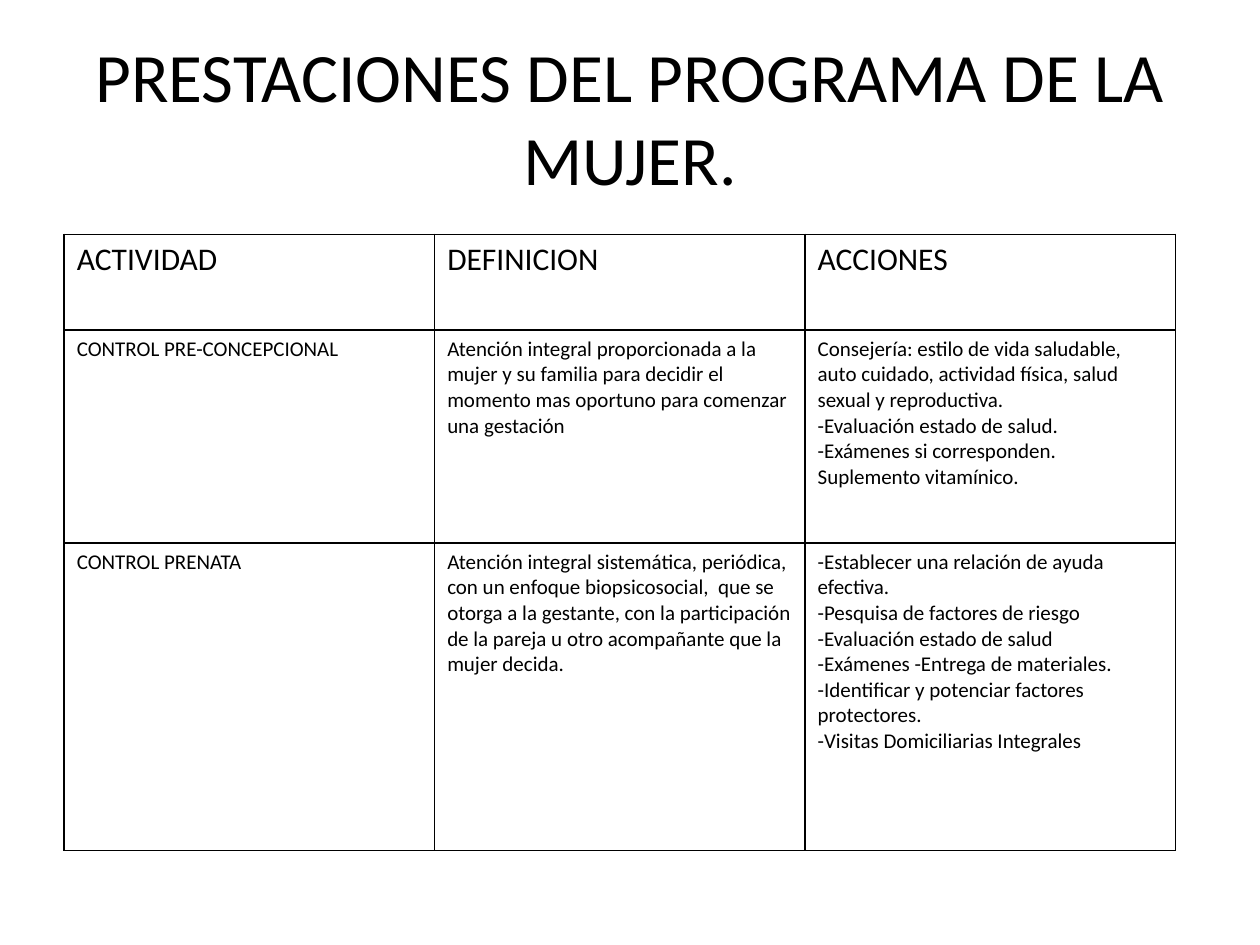
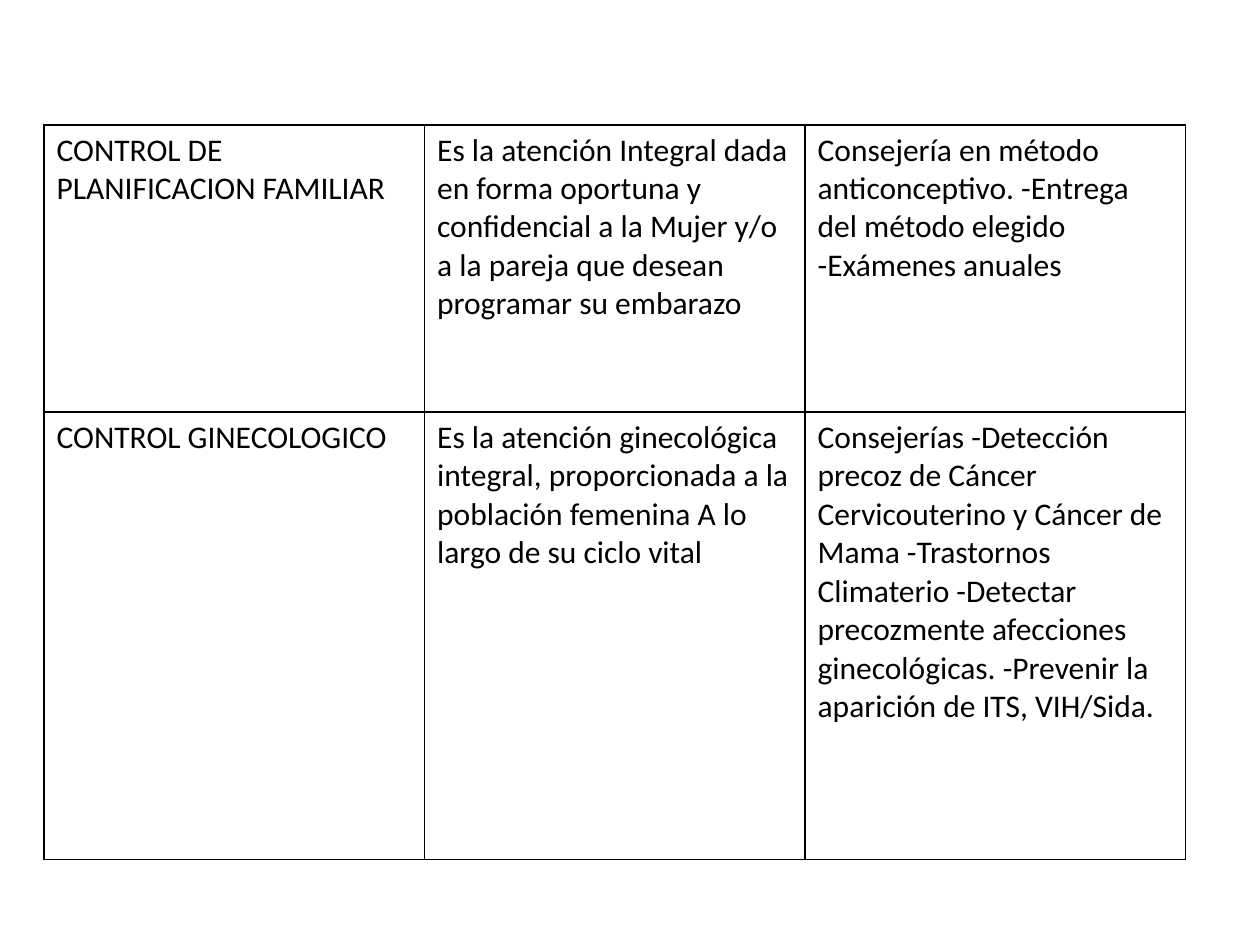
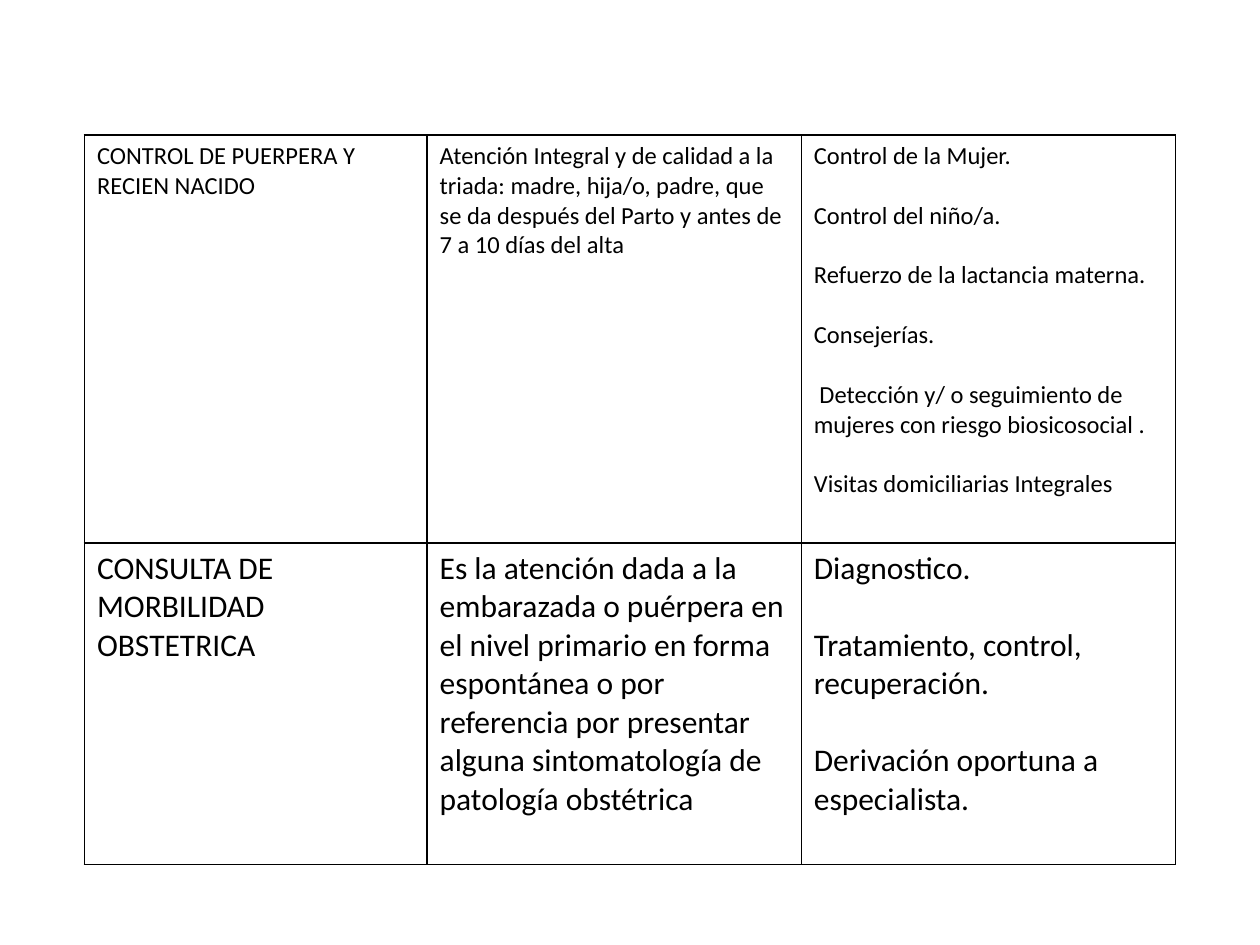
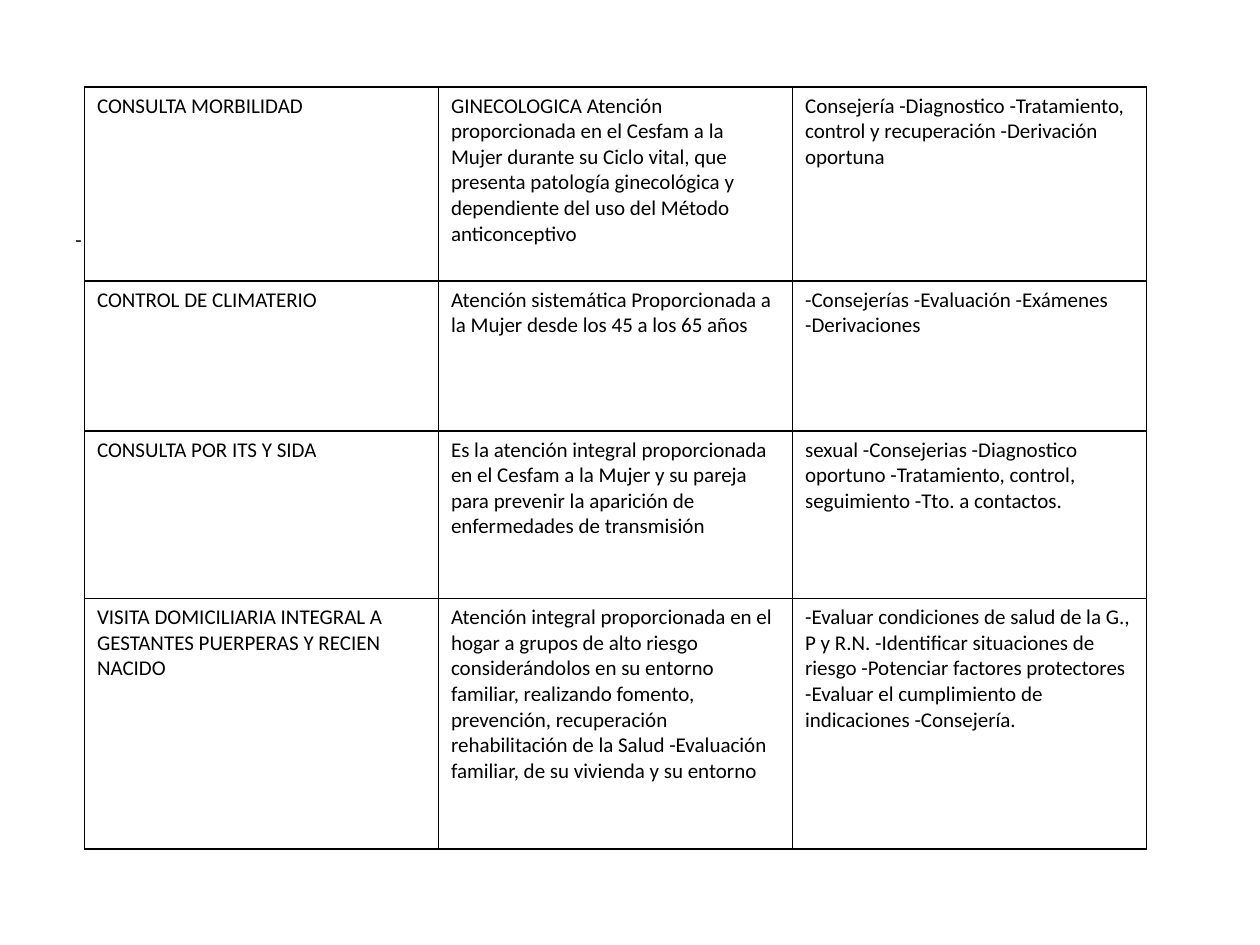
from dataclasses import dataclass

from lxml import etree
from pptx import Presentation
from pptx.dml.color import RGBColor
from pptx.enum import text
from pptx.oxml import ns
from pptx.util import Inches, Pt


@dataclass(frozen=True)
class Theme:
    font: str = "Calibri"
    ink: str = "000000"
    paper: str = "FFFFFF"
    title: float = 39.6
    large: int = 18
    medium: int = 14
    small: int = 12
    border: int = 1
    line_height: float = 1.22


THEME = Theme()
TITLE_ONLY, BLANK = 5, 6


@dataclass(frozen=True)
class Row:
    height: float
    size: int
    cells: tuple  # each cell is a string or a tuple of paragraphs
    spaced: bool = False  # one line of space between paragraphs


# Shared text and cell formatting
def add_run(p, words, size):
    r = p.add_run()
    r.text = words
    r.font.name = THEME.font
    r.font.size = Pt(size)
    r.font.bold = False
    r.font.color.rgb = RGBColor.from_string(THEME.ink)


def draw_borders(cell):
    props = cell._tc.get_or_add_tcPr()
    for index, side in enumerate(("lnL", "lnR", "lnT", "lnB")):
        line = etree.Element(ns.qn(f"a:{side}"), w=str(Pt(THEME.border)))
        fill = etree.SubElement(line, ns.qn("a:solidFill"))
        etree.SubElement(fill, ns.qn("a:srgbClr"), val=THEME.ink)
        props.insert(index, line)


def fill_cell(cell, content, row):
    cell.fill.background()
    draw_borders(cell)
    paragraphs = (content,) if isinstance(content, str) else content
    tf = cell.text_frame
    for i, words in enumerate(paragraphs):
        p = tf.add_paragraph() if i else tf.paragraphs[0]
        if i and row.spaced:
            p.space_before = Pt(round(row.size * THEME.line_height, 1))
        add_run(p, words, row.size)


# Slide parts
def add_slide(prs, layout):
    slide = prs.slides.add_slide(prs.slide_layouts[layout])
    slide.background.fill.solid()
    slide.background.fill.fore_color.rgb = RGBColor.from_string(THEME.paper)
    return slide


def add_title(slide, words, left, top, width, height):
    sp = slide.shapes.title
    sp.left, sp.top = Inches(left), Inches(top)
    sp.width, sp.height = Inches(width), Inches(height)
    tf = sp.text_frame
    tf.word_wrap = True
    tf.vertical_anchor = text.MSO_ANCHOR.MIDDLE
    p = tf.paragraphs[0]
    p.alignment = text.PP_ALIGN.CENTER
    add_run(p, words, THEME.title)


def add_note(slide, words, left, top, width, height):
    sp = slide.shapes.add_textbox(*map(Inches, (left, top, width, height)))
    tf = sp.text_frame
    tf.word_wrap = True
    add_run(tf.paragraphs[0], words, THEME.small)


def add_services_table(slide, left, top, widths, rows):
    height = sum(row.height for row in rows)
    box = map(Inches, (left, top, sum(widths), height))
    table = slide.shapes.add_table(len(rows), len(widths), *box).table
    table.first_row = table.horz_banding = False
    for column, width in zip(table.columns, widths):
        column.width = Inches(width)
    for i, row in enumerate(rows):
        table.rows[i].height = Inches(row.height)
        for j, content in enumerate(row.cells):
            fill_cell(table.cell(i, j), content, row)


# Table contents, one list per slide
PREGNANCY = [
    Row(0.76, THEME.large, ("ACTIVIDAD", "DEFINICION", "ACCIONES")),
    Row(1.69, THEME.small, (
        "CONTROL PRE-CONCEPCIONAL",
        "Atención integral proporcionada a la mujer y su familia para decidir "
        "el momento mas oportuno para comenzar una gestación",
        ("Consejería: estilo de vida saludable, auto cuidado, actividad "
         "física, salud sexual y reproductiva.",
         "-Evaluación estado de salud.",
         "-Exámenes si corresponden. Suplemento vitamínico."))),
    Row(2.44, THEME.small, (
        "CONTROL PRENATA",
        "Atención integral sistemática, periódica, con un enfoque "
        "biopsicosocial,  que se otorga a la gestante, con la participación "
        "de la pareja u otro acompañante que la mujer decida.",
        ("-Establecer una relación de ayuda efectiva.",
         "-Pesquisa de factores de riesgo -Evaluación estado de salud",
         "-Exámenes -Entrega de materiales.",
         "-Identificar y potenciar factores protectores.",
         "-Visitas Domiciliarias Integrales"))),
]

FAMILY_PLANNING = [
    Row(2.28, THEME.large, (
        "CONTROL DE PLANIFICACION FAMILIAR",
        "Es la atención Integral dada en forma oportuna y confidencial a la "
        "Mujer y/o a la pareja que desean programar su embarazo",
        "Consejería en método anticonceptivo. -Entrega del método elegido "
        "-Exámenes anuales")),
    Row(3.55, THEME.large, (
        "CONTROL GINECOLOGICO",
        "Es la atención ginecológica integral, proporcionada a la población "
        "femenina A lo largo de su ciclo vital",
        "Consejerías -Detección precoz de Cáncer Cervicouterino y Cáncer de "
        "Mama -Trastornos Climaterio -Detectar precozmente afecciones "
        "ginecológicas. -Prevenir la aparición de ITS, VIH/Sida.")),
]

POSTPARTUM = [
    Row(3.24, THEME.medium, (
        "CONTROL DE PUERPERA Y RECIEN NACIDO",
        "Atención Integral y de calidad a la triada: madre, hija/o, padre, "
        "que se da después del Parto y antes de 7 a 10 días del alta",
        ("Control de la Mujer.",
         "Control del niño/a.",
         "Refuerzo de la lactancia materna.",
         "Consejerías.",
         " Detección y/ o seguimiento de mujeres con riesgo biosicosocial .",
         "Visitas domiciliarias Integrales")), spaced=True),
    Row(2.55, THEME.large, (
        "CONSULTA DE MORBILIDAD OBSTETRICA",
        "Es la atención dada a la embarazada o puérpera en el nivel primario "
        "en forma espontánea o por referencia por presentar alguna "
        "sintomatología de patología obstétrica",
        ("Diagnostico.",
         "Tratamiento, control, recuperación.",
         "Derivación oportuna a especialista.")), spaced=True),
]

CONSULTATIONS = [
    Row(1.54, THEME.small, (
        "CONSULTA MORBILIDAD",
        "GINECOLOGICA Atención proporcionada en el Cesfam a la Mujer durante "
        "su Ciclo vital, que presenta patología ginecológica y dependiente "
        "del uso del Método anticonceptivo",
        "Consejería -Diagnostico -Tratamiento, control y recuperación "
        "-Derivación oportuna")),
    Row(1.19, THEME.small, (
        "CONTROL DE CLIMATERIO",
        "Atención sistemática Proporcionada a la Mujer desde los 45 a los 65 "
        "años",
        "-Consejerías -Evaluación -Exámenes -Derivaciones")),
    Row(1.33, THEME.small, (
        "CONSULTA POR ITS Y SIDA",
        "Es la atención integral proporcionada en el Cesfam a la Mujer y su "
        "pareja para prevenir la aparición de enfermedades de transmisión",
        "sexual -Consejerias -Diagnostico oportuno -Tratamiento, control, "
        "seguimiento -Tto. a contactos.")),
    Row(1.99, THEME.small, (
        "VISITA DOMICILIARIA INTEGRAL A GESTANTES PUERPERAS Y RECIEN NACIDO",
        "Atención integral proporcionada en el hogar a grupos de alto riesgo "
        "considerándolos en su entorno familiar, realizando fomento, "
        "prevención, recuperación rehabilitación de la Salud -Evaluación "
        "familiar, de su vivienda y su entorno",
        "-Evaluar condiciones de salud de la G., P y R.N. -Identificar "
        "situaciones de riesgo -Potenciar factores protectores -Evaluar el "
        "cumplimiento de indicaciones -Consejería.")),
]


def main():
    prs = Presentation()
    prs.slide_width, prs.slide_height = Inches(10), Inches(7.5)

    # Title and pregnancy services
    slide = add_slide(prs, TITLE_ONLY)
    add_title(slide, "PRESTACIONES DEL PROGRAMA DE LA MUJER.", 0.5, 0.3, 9, 1.25)
    add_services_table(slide, 0.51, 1.86, [2.94] * 3, PREGNANCY)

    # Family planning and gynaecology
    slide = add_slide(prs, BLANK)
    add_services_table(slide, 0.35, 0.99, [3.02] * 3, FAMILY_PLANNING)

    # Postpartum and obstetric care
    slide = add_slide(prs, BLANK)
    add_services_table(slide, 0.67, 1.07, [2.72, 2.97, 2.97], POSTPARTUM)

    # Consultations and home visits, with the dash beside the table
    slide = add_slide(prs, BLANK)
    add_note(slide, "-", 0.5, 1.75, 9, 4.95)
    add_services_table(slide, 0.67, 0.69, [2.81] * 3, CONSULTATIONS)

    prs.save("out.pptx")


if __name__ == "__main__":
    main()
